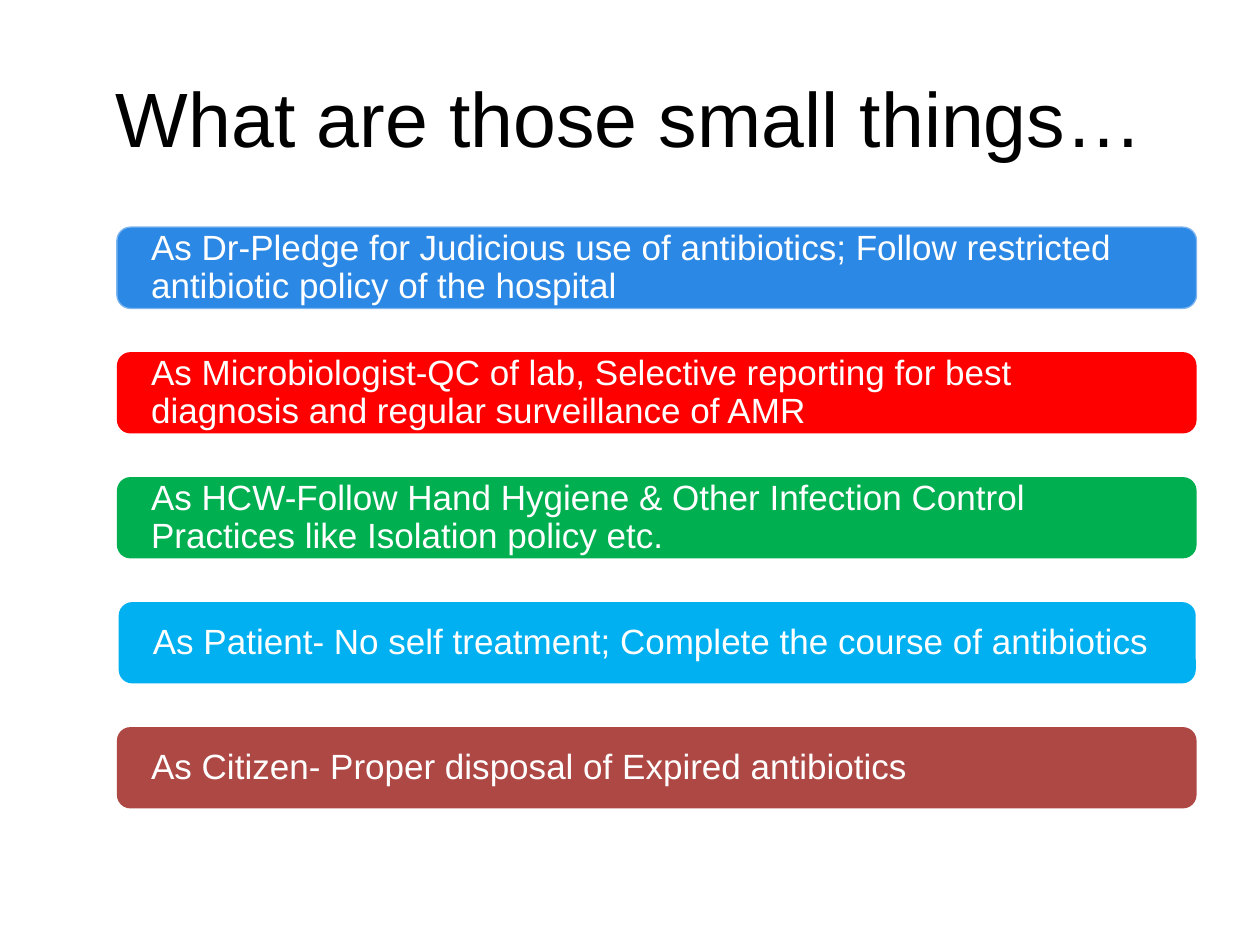
from pptx import Presentation
from pptx.dml.color import RGBColor
from pptx.enum.shapes import MSO_SHAPE as Shape
from pptx.enum.text import MSO_ANCHOR as Anchor, PP_ALIGN as Align
from pptx.util import Pt

COLORS = {
    "title": "000000", "text": "FFFFFF", "edge": "7DB6EF",
    "doctor": "2C88E5", "microbiologist": "FF0000", "worker": "00B050",
    "patient": "00B0F0", "citizen": "AE4845",
}
ROLES = [
    ("doctor", "As Dr-Pledge for Judicious use of antibiotics; "
               "Follow restricted antibiotic policy of the hospital"),
    ("microbiologist", "As Microbiologist-QC of lab, Selective reporting for best "
                       "diagnosis and regular surveillance of AMR"),
    ("worker", "As HCW-Follow Hand Hygiene & Other Infection Control "
               "Practices like Isolation policy etc."),
    ("patient", "As Patient- No self treatment; Complete the course of antibiotics"),
    ("citizen", "As Citizen- Proper disposal of Expired antibiotics"),
]
BAR_HEIGHT = 46.5


def color(name):
    """Return the named colour."""
    return RGBColor.from_string(COLORS[name])


def write(shape, text, size, ink, align):
    """Write one vertically centred paragraph into a shape."""
    frame = shape.text_frame
    frame.word_wrap = True
    frame.vertical_anchor = Anchor.MIDDLE
    para = frame.paragraphs[0]
    para.alignment = align
    span = para.add_run()
    span.text = text
    span.font.name = "Arial"
    span.font.size = Pt(size)
    span.font.color.rgb = color(ink)
    return para


def add_title(page, left, top, width, height):
    """Place the slide title in the given box."""
    box = page.shapes.add_textbox(Pt(left), Pt(top), Pt(width), Pt(height))
    write(box, "What are those small things…", 44, "title", Align.CENTER)


def add_bar(page, role, text, left, top, width):
    """Place one rounded bar with the duty of a role."""
    bar = page.shapes.add_shape(
        Shape.ROUNDED_RECTANGLE, Pt(left), Pt(top), Pt(width), Pt(BAR_HEIGHT))
    bar.shadow.inherit = False
    bar.fill.solid()
    bar.fill.fore_color.rgb = color(role)
    if role == "doctor":
        bar.line.color.rgb = color("edge")
        bar.line.width = Pt(0.75)
    else:
        bar.line.fill.background()
    frame = bar.text_frame
    frame.margin_left = frame.margin_right = Pt(17.28)
    frame.margin_top = frame.margin_bottom = 0
    write(bar, text, 20, "text", Align.LEFT).line_spacing = 0.9


def add_bars(page, left, top, width, height):
    """Spread the role bars evenly down the given box."""
    pitch = (height - BAR_HEIGHT) / (len(ROLES) - 1)
    for row, (role, text) in enumerate(ROLES):
        inset = 1 if role == "patient" else 0
        add_bar(page, role, text, left + inset, top + row * pitch, width - 1.5 * inset)


def main():
    """Build and save the deck."""
    deck = Presentation()
    deck.slide_width, deck.slide_height = Pt(720), Pt(540)
    page = deck.slides.add_slide(deck.slide_layouts[6])
    add_title(page, 36, 21.6, 648, 90)
    add_bars(page, 66.8, 129.8, 617, 332.2)
    deck.save("out.pptx")


if __name__ == "__main__":
    main()
